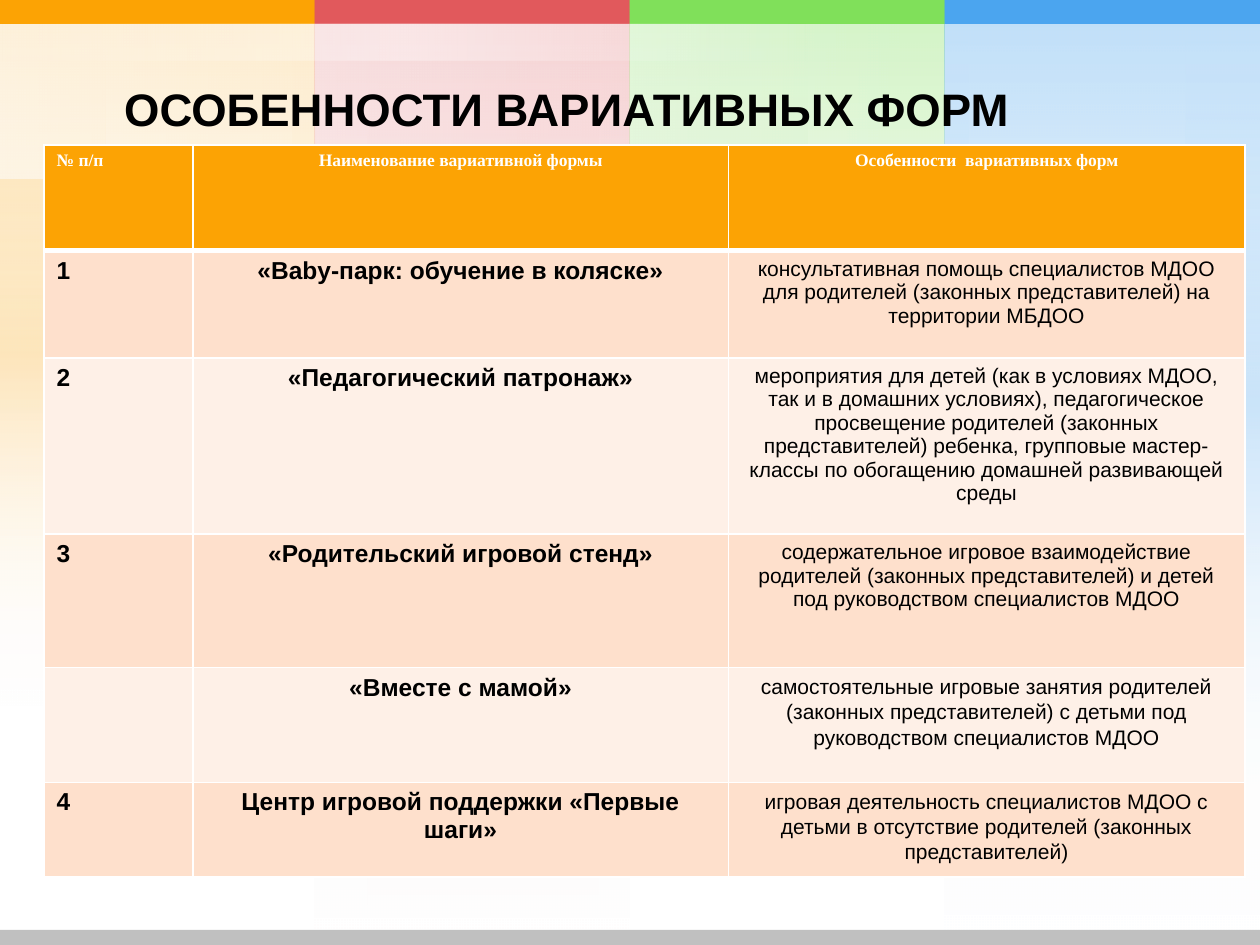
import pptx
import pptx.dml.color
import pptx.enum.shapes
import pptx.enum.text
import pptx.oxml
import pptx.oxml.ns
import pptx.util

ORANGE, RED, GREEN, BLUE = "FCA304", "E1595C", "80E05A", "4BA5EF"
WHITE, BLACK, GREY = "FFFFFF", "000000", "C0C0C0"
ROW_TINTS = ("FEE0CC", "FEF0E7")
CENTER = pptx.enum.text.PP_ALIGN.CENTER
LEFT = pptx.enum.text.PP_ALIGN.LEFT
DRAWING_NS = pptx.oxml.ns.nsdecls("a")


def color(hex_code):
    return pptx.dml.color.RGBColor.from_string(hex_code)


def cell_units(count):
    """Length of grid cells; the slide is 40 columns by 30 rows."""
    return pptx.util.Inches(count * 0.25)


def fade(hex_code, opacity):
    return [(0, hex_code, opacity), (100, WHITE, 0)]


def glow(hex_code, opacity):
    return [(0, WHITE, 0), (50, hex_code, opacity), (100, WHITE, 0)]


class SlideBuilder:
    font = "Arial"

    def __init__(self, deck):
        self.slide = deck.slides.add_slide(deck.slide_layouts[5])
        self.slide.background.fill.solid()
        self.slide.background.fill.fore_color.rgb = color(WHITE)

    def run(self, paragraph, text, size, ink=BLACK, bold=True, font=None):
        run = paragraph.add_run()
        run.text = text
        run.font.name = font or self.font
        run.font.size = pptx.util.Pt(size)
        run.font.bold = bold
        run.font.color.rgb = color(ink)

    def block(self, left, top, width, height, hex_code=None, stops=None, rotation=0):
        block = self.slide.shapes.add_shape(
            pptx.enum.shapes.MSO_SHAPE.RECTANGLE,
            *map(cell_units, (left, top, width, height)))
        block.shadow.inherit = False
        block.line.fill.background()
        block.rotation = rotation
        if stops:
            self.gradient(block, stops)
        else:
            block.fill.solid()
            block.fill.fore_color.rgb = color(hex_code)

    def gradient(self, block, stops):
        marks = "".join(
            f'<a:gs pos="{place * 1000}"><a:srgbClr val="{hex_code}">'
            f'<a:alpha val="{opacity * 1000}"/></a:srgbClr></a:gs>'
            for place, hex_code, opacity in stops)
        block.fill.background()
        properties = block._element.spPr
        empty_fill = properties.find(pptx.oxml.ns.qn("a:noFill"))
        properties.replace(empty_fill, pptx.oxml.parse_xml(
            f'<a:gradFill {DRAWING_NS} rotWithShape="1"><a:gsLst>{marks}</a:gsLst>'
            '<a:lin ang="5400000" scaled="0"/></a:gradFill>'))

    def title(self, text, left, top, width, height, size):
        heading = self.slide.shapes.title
        heading.left, heading.top, heading.width, heading.height = map(
            cell_units, (left, top, width, height))
        heading.text_frame.vertical_anchor = pptx.enum.text.MSO_ANCHOR.MIDDLE
        line = heading.text_frame.paragraphs[0]
        line.alignment = CENTER
        self.run(line, text, size)
        line.add_line_break()
        # Bring the heading in front of the backdrop
        self.slide.shapes._spTree.append(heading._element)

    def table(self, left, top, widths, heights):
        table = self.slide.shapes.add_table(
            len(heights), len(widths),
            *map(cell_units, (left, top, sum(widths), sum(heights)))).table
        for column, width in zip(table.columns, widths):
            column.width = cell_units(width)
        for row, height in zip(table.rows, heights):
            row.height = cell_units(height)
        return table

    def cell(self, cell, text, fill, align, spacing=None, bottom=1, **style):
        cell.fill.solid()
        cell.fill.fore_color.rgb = color(fill)
        self.borders(cell, bottom)
        paragraph = cell.text_frame.paragraphs[0]
        paragraph.alignment = align
        if spacing:
            paragraph.line_spacing = spacing
        if text:
            self.run(paragraph, text, **style)

    def borders(self, cell, bottom):
        properties = cell._tc.get_or_add_tcPr()
        for place, (side, points) in enumerate(
                (("L", 1), ("R", 1), ("T", 1), ("B", bottom))):
            properties.insert(place, pptx.oxml.parse_xml(
                f'<a:ln{side} {DRAWING_NS} w="{points * 12700}"><a:solidFill>'
                f'<a:srgbClr val="{WHITE}"/></a:solidFill></a:ln{side}>'))


def draw_backdrop(page):
    # Four tinted columns: colour, height, then the glows as (left, width, height)
    columns = [
        (ORANGE, 22.48, [(9.28, 0.72, 22.48), (0, 3.36, 22.48)]),
        (RED, 30, [(11.68, 7.32, 30)]),
        (GREEN, 22.48, [(20, 5.64, 22.48)]),
        (BLUE, 29.88, [(30, 0.76, 25.48), (37.64, 2.36, 25.48)]),
    ]
    for index, (tint, height, glows) in enumerate(columns):
        column = (index * 10, 0, 10, height)
        page.block(*column, stops=fade(tint, 20))
        for left, width, glow_height in glows:
            page.block(left, 0, width, glow_height, stops=glow(tint, 20))
        page.block(*column, stops=fade(tint, 20))
        page.block(index * 10, 0, 10, 0.76, tint)

    # White veils behind the heading, turned to fade rightwards
    wide_veil = (12.6, -11.8, 4.88, 30.04)
    for veil, stops in (
            ((16.64, -11.4, 0.4, 33.68), glow(WHITE, 35)),
            (wide_veil, fade(WHITE, 35)),
            ((12.24, -11.48, 1.16, 25.64), glow(WHITE, 35)),
            (wide_veil, fade(WHITE, 35))):
        page.block(*veil, stops=stops, rotation=270)

    # Bottom strip
    page.block(0, 29.52, 40, 0.48, GREY)


def draw_forms_table(page):
    headings = ("№ п/п", "Наименование вариативной формы", "Особенности  вариативных форм")
    # Number, form, features, line spacing of the features
    forms = [
        ("1", "«Baby-парк: обучение в коляске»",
         "консультативная помощь специалистов МДОО для родителей (законных "
         "представителей) на территории МБДОО", None),
        ("2", "«Педагогический патронаж»",
         "мероприятия для детей (как в условиях МДОО, так и в домашних условиях), "
         "педагогическое просвещение родителей (законных представителей) ребенка, "
         "групповые мастер-классы по обогащению домашней развивающей среды", None),
        ("3", "«Родительский игровой стенд»",
         "содержательное игровое взаимодействие родителей (законных представителей) "
         "и детей под руководством специалистов МДОО", None),
        ("", "«Вместе с мамой»",
         "самостоятельные игровые занятия родителей (законных представителей) "
         "с детьми под руководством специалистов МДОО", 1.07),
        ("4", "Центр игровой поддержки «Первые шаги»",
         "игровая деятельность специалистов МДОО с детьми в отсутствие родителей "
         "(законных представителей)", 1.07),
    ]
    table = page.table(1.4, 4.6, (4.72, 17, 16.4), (3.36, 3.4, 5.6, 4.24, 3.64, 3))
    for column, heading in enumerate(headings):
        page.cell(table.cell(0, column), heading, ORANGE, CENTER if column else LEFT,
                  bottom=3, size=10, ink=WHITE, font="Times New Roman")
    for row, (number, form, features, spacing) in enumerate(forms, 1):
        tint = ROW_TINTS[(row - 1) % 2]
        page.cell(table.cell(row, 0), number, tint, LEFT, size=14)
        page.cell(table.cell(row, 1), form, tint, CENTER, size=14)
        page.cell(table.cell(row, 2), features, tint, CENTER, spacing, size=12, bold=False)


def main():
    deck = pptx.Presentation()
    deck.slide_width, deck.slide_height = cell_units(40), cell_units(30)
    page = SlideBuilder(deck)
    draw_backdrop(page)
    page.title("ОСОБЕННОСТИ ВАРИАТИВНЫХ ФОРМ", 2, 1.12, 32, 7.56, 26)
    draw_forms_table(page)
    deck.save("out.pptx")


if __name__ == "__main__":
    main()
